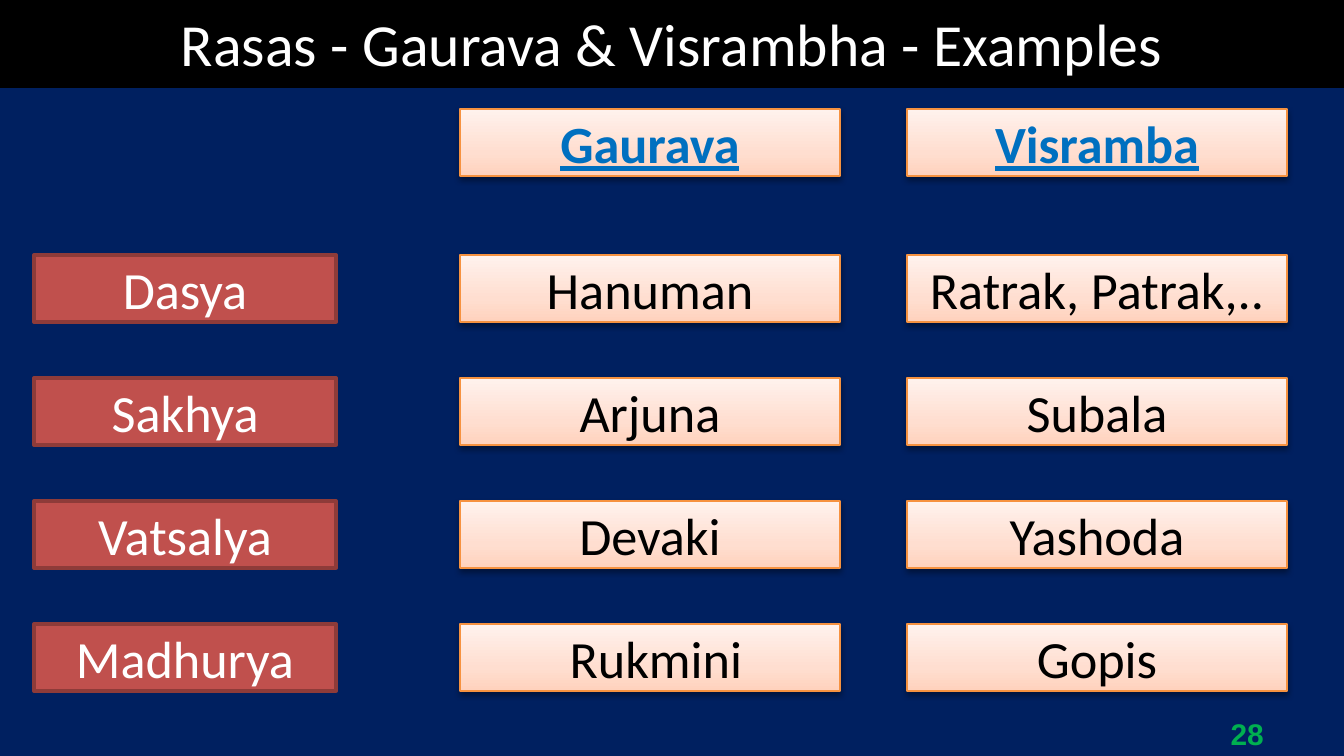
"""Build the slide of Gaurava and Visrambha examples for each rasa."""
from lxml.etree import SubElement
from pptx import Presentation
from pptx.dml.color import RGBColor
from pptx.enum.shapes import MSO_SHAPE
from pptx.enum.text import MSO_ANCHOR, PP_ALIGN
from pptx.oxml.ns import qn
from pptx.util import Pt

TITLE = "Rasas - Gaurava & Visrambha - Examples"
PAGE_NUMBER = "28"
HEADINGS = ["Gaurava", "Visramba"]
EXAMPLES = [
    ("Dasya", "Hanuman", "Ratrak, Patrak,.."),
    ("Sakhya", "Arjuna", "Subala"),
    ("Vatsalya", "Devaki", "Yashoda"),
    ("Madhurya", " Rukmini", "Gopis"),
]

COLORS = {
    "background": "002060", "black": "000000", "white": "FFFFFF",
    "rasa": "C0504D", "rasa_edge": "8E3B39", "example_edge": "F69240",
    "heading": "0070C0", "page": "00B050",
}
PEACH_STOPS = [(0, "FFD2BD"), (35, "FFDED0"), (100, "FFF2ED")]
TEXT = {
    "title": {"size": Pt(32), "name": "Calibri"},
    "cell": {"size": Pt(28), "name": "Calibri"},
    "heading": {"size": Pt(28), "name": "Calibri", "bold": True, "underline": True},
    "page": {"size": Pt(16), "name": "Arial", "bold": True},
}

EMU_PER_PX = 9144000 / 1344
SLIDE_WIDTH, SLIDE_HEIGHT = 1344, 756
TITLE_HEIGHT = 86
COLUMNS = [(34, 302), (460, 380), (907, 380)]
HEADING_TOP, FIRST_ROW_TOP, ROW_PITCH, BOX_HEIGHT = 109, 255, 123, 67


def px(*lengths):
    return [round(length * EMU_PER_PX) for length in lengths]


def color(key):
    return RGBColor.from_string(COLORS[key])


def write(holder, words, style, ink, align=PP_ALIGN.CENTER, anchor=MSO_ANCHOR.MIDDLE):
    frame = holder.text_frame
    frame.word_wrap = True
    frame.vertical_anchor = anchor
    paragraph = frame.paragraphs[0]
    paragraph.alignment = align
    run = paragraph.add_run()
    run.text = words
    for attribute, value in TEXT[style].items():
        setattr(run.font, attribute, value)
    run.font.color.rgb = color(ink)


def add_box(slide, place, edge, edge_width, fill=None):
    box = slide.shapes.add_shape(MSO_SHAPE.RECTANGLE, *px(*place))
    box.shadow.inherit = False
    box.line.color.rgb = color(edge)
    box.line.width = Pt(edge_width)
    if fill:
        box.fill.solid()
        box.fill.fore_color.rgb = color(fill)
    return box


def add_peach_box(slide, place):
    box = add_box(slide, place, "example_edge", 0.75)
    box.fill.gradient()
    box.fill.gradient_angle = 90
    properties = box.element.spPr
    stops = properties.find(".//" + qn("a:gsLst"))
    for stop in list(stops):
        stops.remove(stop)
    for position, shade in PEACH_STOPS:
        stop = SubElement(stops, qn("a:gs"), pos=str(position * 1000))
        SubElement(stop, qn("a:srgbClr"), val=shade)
    shadow = SubElement(properties.find(qn("a:effectLst")), qn("a:outerShdw"),
                        blurRad=str(Pt(3.1)), dist=str(Pt(1.6)), dir="5400000",
                        rotWithShape="0")
    shade = SubElement(shadow, qn("a:srgbClr"), val=COLORS["black"])
    SubElement(shade, qn("a:alpha"), val="38000")
    return box


def main():
    deck = Presentation()
    deck.slide_width, deck.slide_height = px(SLIDE_WIDTH, SLIDE_HEIGHT)
    slide = deck.slides.add_slide(deck.slide_layouts[6])
    slide.background.fill.solid()
    slide.background.fill.fore_color.rgb = color("background")

    page = slide.shapes.add_textbox(*px(964, 720, 313, 27))
    write(page, PAGE_NUMBER, "page", "page", PP_ALIGN.RIGHT)

    title = add_box(slide, (0, 0, SLIDE_WIDTH, TITLE_HEIGHT), "black", 2, "black")
    write(title, TITLE, "title", "white", anchor=MSO_ANCHOR.TOP)

    for (left, width), heading in zip(COLUMNS[1:], HEADINGS):
        box = add_peach_box(slide, (left, HEADING_TOP, width, BOX_HEIGHT))
        write(box, heading, "heading", "heading")

    for row, (rasa, *examples) in enumerate(EXAMPLES):
        top = FIRST_ROW_TOP + row * ROW_PITCH
        left, width = COLUMNS[0]
        box = add_box(slide, (left, top, width, BOX_HEIGHT), "rasa_edge", 2, "rasa")
        write(box, rasa, "cell", "white")
        for (left, width), example in zip(COLUMNS[1:], examples):
            box = add_peach_box(slide, (left, top, width, BOX_HEIGHT))
            write(box, example, "cell", "black")

    deck.save("out.pptx")


if __name__ == "__main__":
    main()
